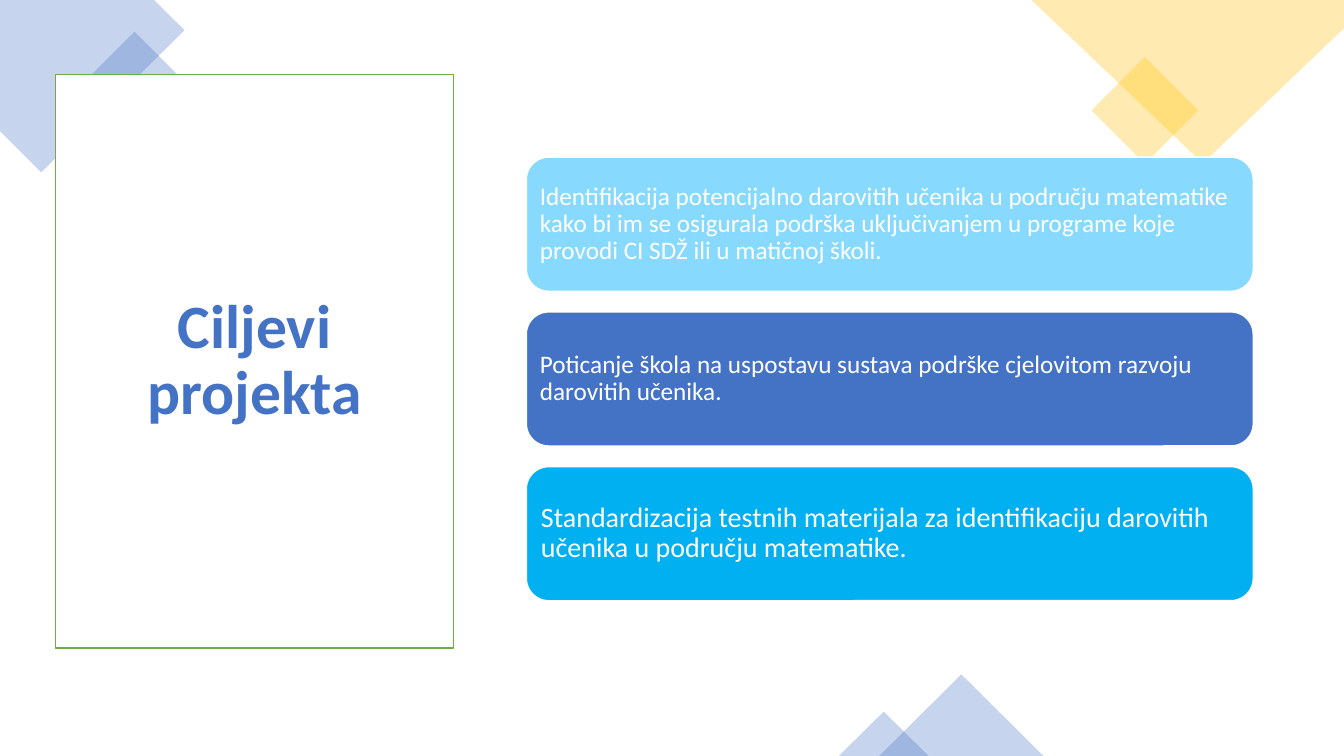
from pptx import Presentation
from pptx.dml.color import RGBColor
from pptx.enum.shapes import MSO_SHAPE as Shape
from pptx.enum.text import MSO_ANCHOR as Anchor, PP_ALIGN as Align
from pptx.util import Inches, Pt
from lxml import etree

BLUE = RGBColor(0x44, 0x72, 0xC4)
PALE_BLUE = RGBColor(0x88, 0xD9, 0xFE)
SKY = RGBColor(0x00, 0xB0, 0xF0)
GOLD = RGBColor(0xFF, 0xC0, 0x00)
GREEN = RGBColor(0x70, 0xAD, 0x47)
WHITE = RGBColor(0xFF, 0xFF, 0xFF)

TITLE = "Ciljevi projekta"
# text, fill, font size, text inset
GOALS = [
    ("Identifikacija potencijalno darovitih učenika u području matematike kako bi im se "
     "osigurala podrška uključivanjem u programe koje provodi CI SDŽ ili u matičnoj školi.",
     PALE_BLUE, 18, 0.07),
    ("Poticanje škola na uspostavu sustava podrške cjelovitom razvoju darovitih učenika.",
     BLUE, 18, 0.07),
    ("Standardizacija testnih materijala za identifikaciju darovitih učenika "
     "u području matematike.", SKY, 20, 0.08),
]
# corner points, fill
CORNERS = [
    ([(1.53, 0), (0, 0), (0, 1.3), (0.41, 1.71), (1.83, 0.3)], BLUE),
    ([(13.33, 0), (10.23, 0), (11.93, 1.62), (13.33, 0.28)], GOLD),
]
# preset, left, top, width, height, rotation, fill
ACCENTS = [
    (Shape.RECTANGLE, 0.98, 0.46, 0.71, 0.71, 315, BLUE),
    (Shape.RECTANGLE, 10.98, 0.72, 0.75, 0.75, 315, GOLD),
    (Shape.ISOSCELES_TRIANGLE, 8.72, 6.69, 1.63, 0.81, 0, BLUE),
    (Shape.ISOSCELES_TRIANGLE, 8.32, 7.06, 0.89, 0.44, 0, BLUE),
]
CARD_LEFT, CARD_TOP, CARD_WIDTH, CARD_HEIGHT = 5.22, 1.56, 7.21, 1.33
CARD_STEP = 1.535
DRAWING_NS = "http://schemas.openxmlformats.org/drawingml/2006/main"


def paint(shape, fill, line=None):
    shape.shadow.inherit = False
    shape.fill.solid()
    shape.fill.fore_color.rgb = fill
    if line is None:
        shape.line.fill.background()
    else:
        shape.line.color.rgb = line
        shape.line.width = Pt(1)


def paint_translucent(shape, fill):
    paint(shape, fill)
    color = shape.fill._xPr.find(f".//{{{DRAWING_NS}}}srgbClr")
    etree.SubElement(color, f"{{{DRAWING_NS}}}alpha", val="30000")


def write(shape, text, size, color, align, inset_x, inset_y, bold=False):
    frame = shape.text_frame
    frame.text = text
    frame.word_wrap = True
    frame.vertical_anchor = Anchor.MIDDLE
    frame.margin_left = frame.margin_right = Inches(inset_x)
    frame.margin_top = frame.margin_bottom = Inches(inset_y)
    para = frame.paragraphs[0]
    para.alignment = align
    para.line_spacing = 0.9
    font = para.runs[0].font
    font.name, font.size, font.bold = "Calibri", Pt(size), bold
    font.color.rgb = color


deck = Presentation()
deck.slide_width, deck.slide_height = Inches(13.33), Inches(7.5)
page = deck.slides.add_slide(deck.slide_layouts[6])
shapes = page.shapes

for points, fill in CORNERS:
    start, *rest = [(Inches(x), Inches(y)) for x, y in points]
    builder = shapes.build_freeform(*start)
    builder.add_line_segments(rest, close=True)
    paint_translucent(builder.convert_to_shape(), fill)

for preset, left, top, width, height, rotation, fill in ACCENTS:
    accent = shapes.add_shape(preset, Inches(left), Inches(top), Inches(width), Inches(height))
    accent.rotation = rotation
    paint_translucent(accent, fill)

title_box = shapes.add_shape(Shape.RECTANGLE, Inches(0.55), Inches(0.74),
                             Inches(3.95), Inches(5.69))
paint(title_box, WHITE, GREEN)
write(title_box, TITLE, 44, BLUE, Align.CENTER, 0.1, 0.05, bold=True)

for index, (text, fill, size, inset) in enumerate(GOALS):
    card = shapes.add_shape(Shape.ROUNDED_RECTANGLE, Inches(CARD_LEFT),
                            Inches(CARD_TOP + index * CARD_STEP),
                            Inches(CARD_WIDTH), Inches(CARD_HEIGHT))
    paint(card, fill, WHITE)
    write(card, text, size, WHITE, Align.LEFT, inset, inset)

deck.save("out.pptx")
